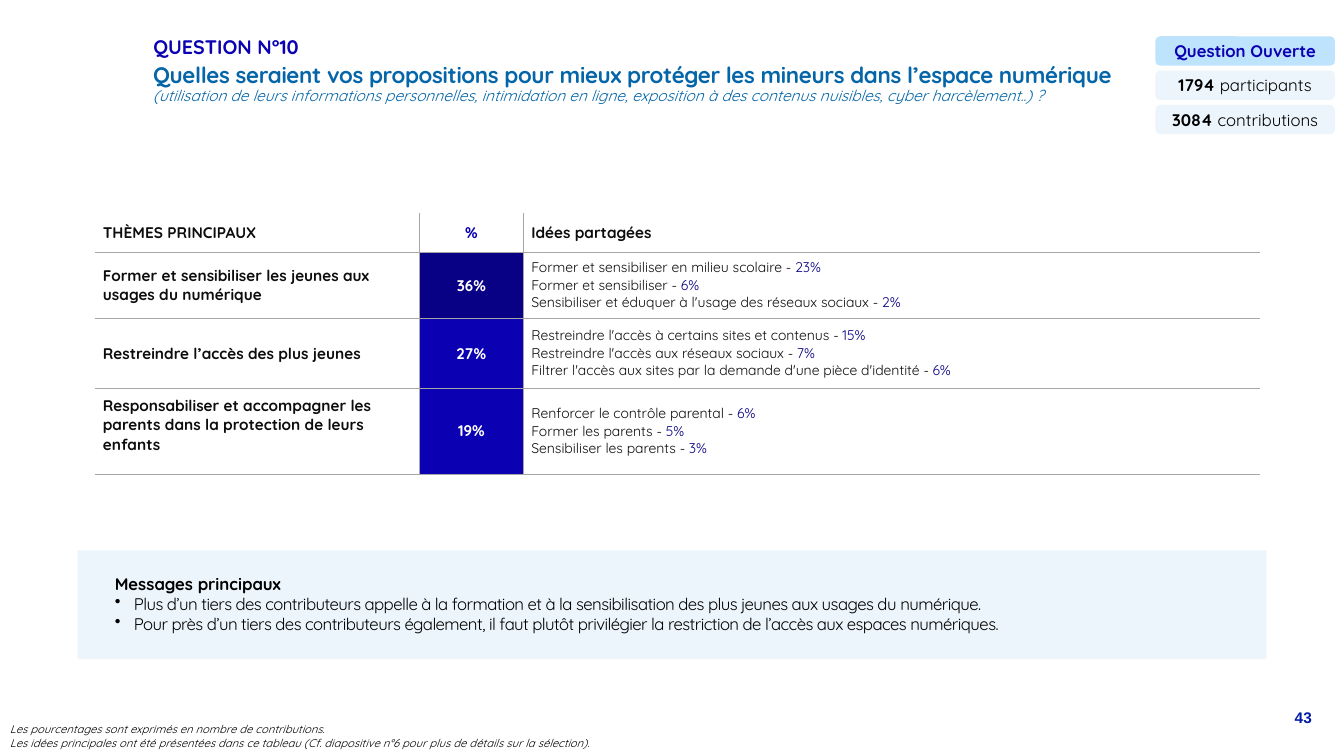
import dataclasses

import lxml.etree
import pptx
import pptx.dml.color
import pptx.enum.shapes
import pptx.enum.text
import pptx.oxml.ns
import pptx.util

Inches = pptx.util.Inches
ALIGN = pptx.enum.text.PP_ALIGN
ANCHOR = pptx.enum.text.MSO_ANCHOR
SHAPE = pptx.enum.shapes.MSO_SHAPE


@dataclasses.dataclass(frozen=True)
class Theme:
    font: str = "Quicksand"
    number_font: str = "Arial"
    black: str = "000000"
    ink: str = "0D0D0D"
    white: str = "FFFFFF"
    royal: str = "0B00B2"
    navy: str = "080085"
    blue: str = "0465A9"
    number: str = "011CA3"
    pale: str = "ECF5FB"
    sky: str = "BDE3FD"
    rule: str = "A5A6A5"
    question: int = 16
    heading: int = 14
    body: int = 12
    table: int = 11
    idea: int = 10
    note: int = 8


THEME = Theme()


@dataclasses.dataclass(frozen=True)
class Box:
    left: float
    top: float
    width: float
    height: float

    def lengths(self):
        return [Inches(value) for value in dataclasses.astuple(self)]


THEMES = [
    ("Former et sensibiliser les jeunes aux usages du numérique", "36%", [
        ("Former et sensibiliser en milieu scolaire", "23%"),
        ("Former et sensibiliser", "6%"),
        ("Sensibiliser et éduquer à l'usage des réseaux sociaux", "2%")]),
    ("Restreindre l’accès des plus jeunes", "27%", [
        ("Restreindre l'accès à certains sites et contenus", "15%"),
        ("Restreindre l'accès aux réseaux sociaux", "7%"),
        ("Filtrer l'accès aux sites par la demande d'une pièce d'identité", "6%")]),
    ("Responsabiliser et accompagner les parents dans la protection de leurs enfants", "19%", [
        ("Renforcer le contrôle parental", "6%"),
        ("Former les parents", "5%"),
        ("Sensibiliser les parents", "3%")]),
]
MESSAGES = [
    "Plus d’un tiers des contributeurs appelle à la formation et à la sensibilisation "
    "des plus jeunes aux usages du numérique.",
    "Pour près d’un tiers des contributeurs également, il faut plutôt privilégier "
    "la restriction de l’accès aux espaces numériques.",
]
NOTES = [
    "Les pourcentages sont exprimés en nombre de contributions.",
    "Les idées principales ont été présentées dans ce tableau "
    "(Cf. diapositive n°6 pour plus de détails sur la sélection).",
]


def rgb(color):
    return pptx.dml.color.RGBColor.from_string(color)


def write(frame, paragraphs, **para_format):
    """Fill a frame with paragraphs, each a list of (text, format) spans."""
    for index, spans in enumerate(paragraphs):
        para = frame.add_paragraph() if index else frame.paragraphs[0]
        for name, value in para_format.items():
            setattr(para, name, value)
        for text, span_format in spans:
            span = para.add_run()
            span.text = text
            values = {"name": THEME.font, "bold": False, **span_format}
            span.font.color.rgb = rgb(values.pop("color", THEME.black))
            span.font.size = pptx.util.Pt(values.pop("size"))
            spacing = values.pop("spacing", 0)
            if spacing:
                span.font._element.set("spc", str(round(spacing * 100)))
            for name, value in values.items():
                setattr(span.font, name, value)


def add_text(page, box, paragraphs, anchor=ANCHOR.TOP, **para_format):
    frame = page.shapes.add_textbox(*box.lengths()).text_frame
    frame.word_wrap = True
    frame.vertical_anchor = anchor
    write(frame, paragraphs, **para_format)
    return frame


def add_panel(page, box, color, kind=SHAPE.RECTANGLE):
    panel = page.shapes.add_shape(kind, *box.lengths())
    panel.shadow.inherit = False
    panel.fill.solid()
    panel.fill.fore_color.rgb = rgb(color)
    panel.line.fill.background()
    return panel


def add_heading(page, box):
    title = page.shapes.title
    line = Box(box.left, box.top, box.width, 0.27)
    for name, value in zip(("left", "top", "width", "height"), line.lengths()):
        setattr(title, name, value)
    title.text_frame.vertical_anchor = ANCHOR.MIDDLE
    write(title.text_frame, [[("QUESTION N°10", {
        "size": THEME.heading, "color": THEME.royal, "bold": True})]],
        alignment=ALIGN.LEFT, line_spacing=0.9)
    add_text(page, Box(box.left, box.top + 0.3, box.width, box.height - 0.3), [[
        ("Quelles seraient vos propositions pour mieux protéger les mineurs "
         "dans l’espace numérique ",
         {"size": THEME.question, "color": THEME.blue, "bold": True, "spacing": -0.2}),
        ("(utilisation de leurs informations personnelles, intimidation en ligne, "
         "exposition à des contenus nuisibles, cyber harcèlement..) ?",
         {"size": THEME.table, "color": THEME.blue, "italic": True})]],
        anchor=ANCHOR.MIDDLE, line_spacing=0.9)


def add_badges(page, box):
    badges = [("Question Ouverte", "", THEME.sky, THEME.royal),
              ("1794 ", "participants", THEME.pale, THEME.black),
              ("3084 ", "contributions", THEME.pale, THEME.black)]
    height = 0.29
    step = (box.height - height) / (len(badges) - 1)
    for index, (strong, light, fill, color) in enumerate(badges):
        place = Box(box.left, box.top + index * step, box.width, height)
        badge = add_panel(page, place, fill, SHAPE.ROUNDED_RECTANGLE)
        badge.text_frame.vertical_anchor = ANCHOR.MIDDLE
        spans = [(strong, {"size": THEME.body, "color": color, "bold": True})]
        if light:
            spans.append((light, {"size": THEME.body}))
        write(badge.text_frame, [spans], alignment=ALIGN.CENTER)


def set_borders(cell, shown):
    properties = cell._tc.get_or_add_tcPr()
    qn = pptx.oxml.ns.qn
    for side in "LRTB":
        line = lxml.etree.SubElement(properties, qn(f"a:ln{side}"), w="3175")
        if side in shown:
            fill = lxml.etree.SubElement(line, qn("a:solidFill"))
            lxml.etree.SubElement(fill, qn("a:srgbClr"), val=THEME.rule)
        else:
            lxml.etree.SubElement(line, qn("a:noFill"))


def add_themes_table(page, box):
    widths, heights = [3.22, 1.03, 7.31], [0.39, 0.66, 0.69, 0.85]
    table = page.shapes.add_table(len(heights), len(widths), *box.lengths()).table
    table.first_row = table.horz_banding = False
    for column, width in zip(table.columns, widths):
        column.width = Inches(width)
    for row, height in zip(table.rows, heights):
        row.height = Inches(height)

    strong = {"size": THEME.table, "color": THEME.ink, "bold": True}
    idea = {"size": THEME.idea, "color": THEME.ink}
    rows = [[[[("THÈMES PRINCIPAUX", strong)]],
             [[("%", {**strong, "color": THEME.royal})]],
             [[("Idées partagées", strong)]]]]
    for label, share, ideas in THEMES:
        rows.append([[[(label, strong)]],
                     [[(share, {**strong, "color": THEME.white})]],
                     [[(f"{text} - ", idea), (part, {**idea, "color": THEME.navy})]
                      for text, part in ideas]])

    fills = [None, THEME.navy, THEME.royal, THEME.royal]
    borders = ["RTB", "LRTB", "LTB"]
    for row, contents in enumerate(rows):
        for column, paragraphs in enumerate(contents):
            cell = table.cell(row, column)
            tall_label = row == len(THEMES) and column == 0
            inset = 0.04 if row and column == 2 else 0
            layout = {"margin_left": Inches(0.08), "margin_right": Inches(0.08),
                      "margin_top": Inches(0.08 if tall_label else inset),
                      "margin_bottom": Inches(inset),
                      "vertical_anchor": ANCHOR.TOP if tall_label else ANCHOR.MIDDLE}
            for name, value in layout.items():
                setattr(cell, name, value)
            set_borders(cell, borders[column] if row else borders[column].replace("T", ""))
            if column == 1 and fills[row]:
                cell.fill.solid()
                cell.fill.fore_color.rgb = rgb(fills[row])
            else:
                cell.fill.background()
            write(cell.text_frame, paragraphs,
                  alignment=ALIGN.CENTER if column == 1 else ALIGN.LEFT)


def add_messages(page, box):
    add_panel(page, box, THEME.pale)
    paragraphs = [[("Messages principaux", {"size": THEME.body, "bold": True})]]
    paragraphs += [[(text, {"size": THEME.body, "spacing": -0.4})] for text in MESSAGES]
    frame = add_text(page, Box(box.left + 0.27, box.top + 0.18, box.width - 0.75, 0.71),
                     paragraphs)
    for para in frame.paragraphs[1:]:
        properties = para._p.get_or_add_pPr()
        indent = Inches(0.19)
        properties.set("marL", str(indent))
        properties.set("indent", str(-indent))
        lxml.etree.SubElement(properties, pptx.oxml.ns.qn("a:buChar"), char="•")


def add_footer(page, box):
    add_text(page, Box(box.left, box.top + 0.14, 7.37, 0.37),
             [[(text, {"size": THEME.note, "italic": True})] for text in NOTES])
    add_text(page, Box(box.left + box.width - 1.97, box.top, 1.97, box.height),
             [[("43", {"name": THEME.number_font, "size": THEME.table,
                       "color": THEME.number, "bold": True})]], alignment=ALIGN.RIGHT)


def main():
    deck = pptx.Presentation()
    deck.slide_width, deck.slide_height = Inches(13.33), Inches(7.5)
    page = deck.slides.add_slide(deck.slide_layouts.get_by_name("Title Only"))
    add_heading(page, Box(1.42, 0.34, 10.23, 0.7))
    add_themes_table(page, Box(0.94, 2.11, 11.56, 2.59))
    add_messages(page, Box(0.77, 5.46, 11.79, 1.08))
    add_badges(page, Box(11.46, 0.36, 1.78, 0.97))
    add_footer(page, Box(0, 6.98, 13.11, 0.52))
    deck.save("out.pptx")


if __name__ == "__main__":
    main()
